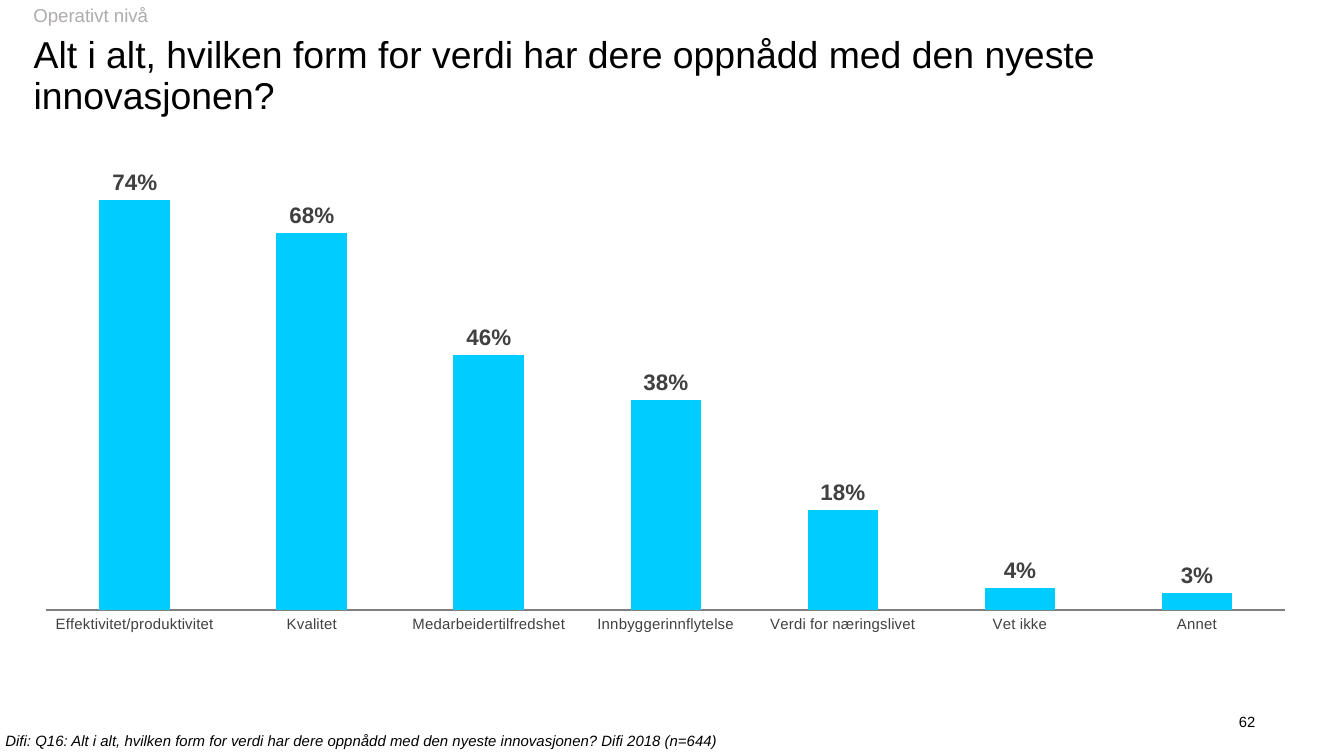
from dataclasses import dataclass

from lxml import etree
from pptx import Presentation
from pptx.chart.data import CategoryChartData
from pptx.dml.color import RGBColor
from pptx.enum.chart import XL_CHART_TYPE, XL_LABEL_POSITION, XL_TICK_LABEL_POSITION, XL_TICK_MARK
from pptx.enum.text import MSO_ANCHOR, MSO_AUTO_SIZE, PP_ALIGN
from pptx.oxml.ns import qn
from pptx.util import Inches, Pt

COLUMNS = XL_CHART_TYPE.COLUMN_CLUSTERED
OUTSIDE_END = XL_LABEL_POSITION.OUTSIDE_END
NEXT_TO_AXIS = XL_TICK_LABEL_POSITION.NEXT_TO_AXIS
NO_TICK = XL_TICK_MARK.NONE
TOP, MIDDLE, BOTTOM = MSO_ANCHOR.TOP, MSO_ANCHOR.MIDDLE, MSO_ANCHOR.BOTTOM
NO_AUTOSIZE = MSO_AUTO_SIZE.NONE
LEFT, RIGHT = PP_ALIGN.LEFT, PP_ALIGN.RIGHT
TITLE_ONLY = 5
PAGE_WIDTH = 10
PAGE_HEIGHT = PAGE_WIDTH * 9 / 16


@dataclass(frozen=True)
class Theme:
    font: str = "Arial"
    text: str = "000000"
    muted: str = "AFABAB"
    chart_text: str = "404040"
    axis_line: str = "808080"
    bar: str = "00CCFF"
    title_size: float = 20
    section_size: float = 10
    source_size: float = 8
    number_size: float = 7.9
    chart_size: float = 11
    category_size: float = 8
    value_size: float = 12


THEME = Theme()
VALUES = {
    "Effektivitet/produktivitet": 74,
    "Kvalitet": 68,
    "Medarbeidertilfredshet": 46,
    "Innbyggerinnflytelse": 38,
    "Verdi for næringslivet": 18,
    "Vet ikke": 4,
    "Annet": 3,
}


def inches(box):
    return [Inches(length) for length in box]


def style_font(font, size, color, bold=False, italic=False):
    font.name, font.size = THEME.font, Pt(size)
    font.bold, font.italic = bold, italic
    font.color.rgb = RGBColor.from_string(color)


def write_text(shape, text, size, color, anchor=TOP, align=LEFT, spacing=1.0,
               wrap=True, italic=False, inset=(0, 0)):
    frame = shape.text_frame
    frame.auto_size = NO_AUTOSIZE
    frame.word_wrap = wrap
    frame.vertical_anchor = anchor
    frame.margin_left = frame.margin_right = Inches(inset[0])
    frame.margin_top = frame.margin_bottom = Inches(inset[1])
    para = frame.paragraphs[0]
    para.alignment, para.line_spacing, para.space_before = align, spacing, Pt(0)
    span = para.add_run()
    span.text = text
    style_font(span.font, size, color, italic=italic)


def add_heading(page, box):
    """Places the section name above the title."""
    left, top, width, height = box
    section = page.shapes.add_textbox(*inches((left - 0.1, top, 1.24, 0.26)))
    write_text(section, "Operativt nivå", THEME.section_size, THEME.muted,
               spacing=0.9, wrap=False, inset=(0.1, 0.05))
    title = page.shapes.title
    title.left, title.top, title.width, title.height = inches(
        (left, top + 0.31, width, height - 0.31))
    write_text(title, "Alt i alt, hvilken form for verdi har dere oppnådd med den nyeste innovasjonen?",
               THEME.title_size, THEME.text, anchor=BOTTOM, spacing=0.9)


def set_plot_area(chart, shares):
    """Fixes the inner plot area as shares of the chart."""
    plot_area = chart._chartSpace.chart.plotArea
    for old in plot_area.findall(qn("c:layout")):
        plot_area.remove(old)
    layout = etree.Element(qn("c:layout"))
    manual = etree.SubElement(layout, qn("c:manualLayout"))
    settings = {"layoutTarget": "inner", "xMode": "edge", "yMode": "edge", **shares}
    for name, value in settings.items():
        etree.SubElement(manual, qn("c:" + name)).set("val", str(value))
    plot_area.insert(0, layout)


def add_value_chart(page, box):
    data = CategoryChartData()
    data.categories = list(VALUES)
    data.add_series("Series 1", list(VALUES.values()))
    chart = page.shapes.add_chart(COLUMNS, *inches(box), data).chart
    chart.has_title = chart.has_legend = False
    style_font(chart.font, THEME.chart_size, THEME.text)
    set_plot_area(chart, {"x": 0.007, "y": 0.021, "w": 0.993, "h": 0.881})

    scale = chart.value_axis
    scale.minimum_scale, scale.maximum_scale, scale.major_unit = 0, 80, 20
    scale.has_major_gridlines = False
    scale.tick_labels.number_format = "0.00%"
    scale.tick_labels.number_format_is_linked = False
    scale.visible = False

    categories = chart.category_axis
    categories.major_tick_mark = categories.minor_tick_mark = NO_TICK
    categories.tick_label_position = NEXT_TO_AXIS
    style_font(categories.tick_labels.font, THEME.category_size, THEME.chart_text)
    categories.format.line.color.rgb = RGBColor.from_string(THEME.axis_line)
    categories.format.line.width = Pt(0.75)

    plot = chart.plots[0]
    plot.gap_width, plot.overlap = 150, -9
    plot.vary_by_categories = False
    bars = plot.series[0]
    bars.format.fill.solid()
    bars.format.fill.fore_color.rgb = RGBColor.from_string(THEME.bar)
    labels = bars.data_labels
    labels.show_value = True
    labels.position = OUTSIDE_END
    labels.number_format, labels.number_format_is_linked = "#\\%", False
    style_font(labels.font, THEME.value_size, THEME.chart_text, bold=True)


def add_footer(page, box):
    """Places the source line at the bottom left and the page number above it at the right."""
    left, top, width, height = box
    source = page.shapes.add_textbox(*inches((left, top + height - 0.13, 5.38, 0.13)))
    write_text(source, "Difi: Q16: Alt i alt, hvilken form for verdi har dere oppnådd med den nyeste "
               "innovasjonen? Difi 2018 (n=644)",
               THEME.source_size, THEME.text, wrap=False, italic=True)
    number = page.shapes.add_textbox(*inches((left + width - 0.25, top, 0.25, 0.15)))
    write_text(number, "62", THEME.number_size, THEME.text, anchor=MIDDLE, align=RIGHT)


def main():
    deck = Presentation()
    deck.slide_width, deck.slide_height = Inches(PAGE_WIDTH), Inches(PAGE_HEIGHT)
    page = deck.slides.add_slide(deck.slide_layouts[TITLE_ONLY])
    add_heading(page, (0.025 * PAGE_WIDTH, 0, 0.961 * PAGE_WIDTH, 0.155 * PAGE_HEIGHT))
    add_value_chart(page, (0.028 * PAGE_WIDTH, 0.207 * PAGE_HEIGHT,
                           0.929 * PAGE_WIDTH, 0.665 * PAGE_HEIGHT))
    add_footer(page, (0.004 * PAGE_WIDTH, 0.941 * PAGE_HEIGHT,
                      0.93 * PAGE_WIDTH, 0.05 * PAGE_HEIGHT))
    deck.save("out.pptx")


if __name__ == "__main__":
    main()
